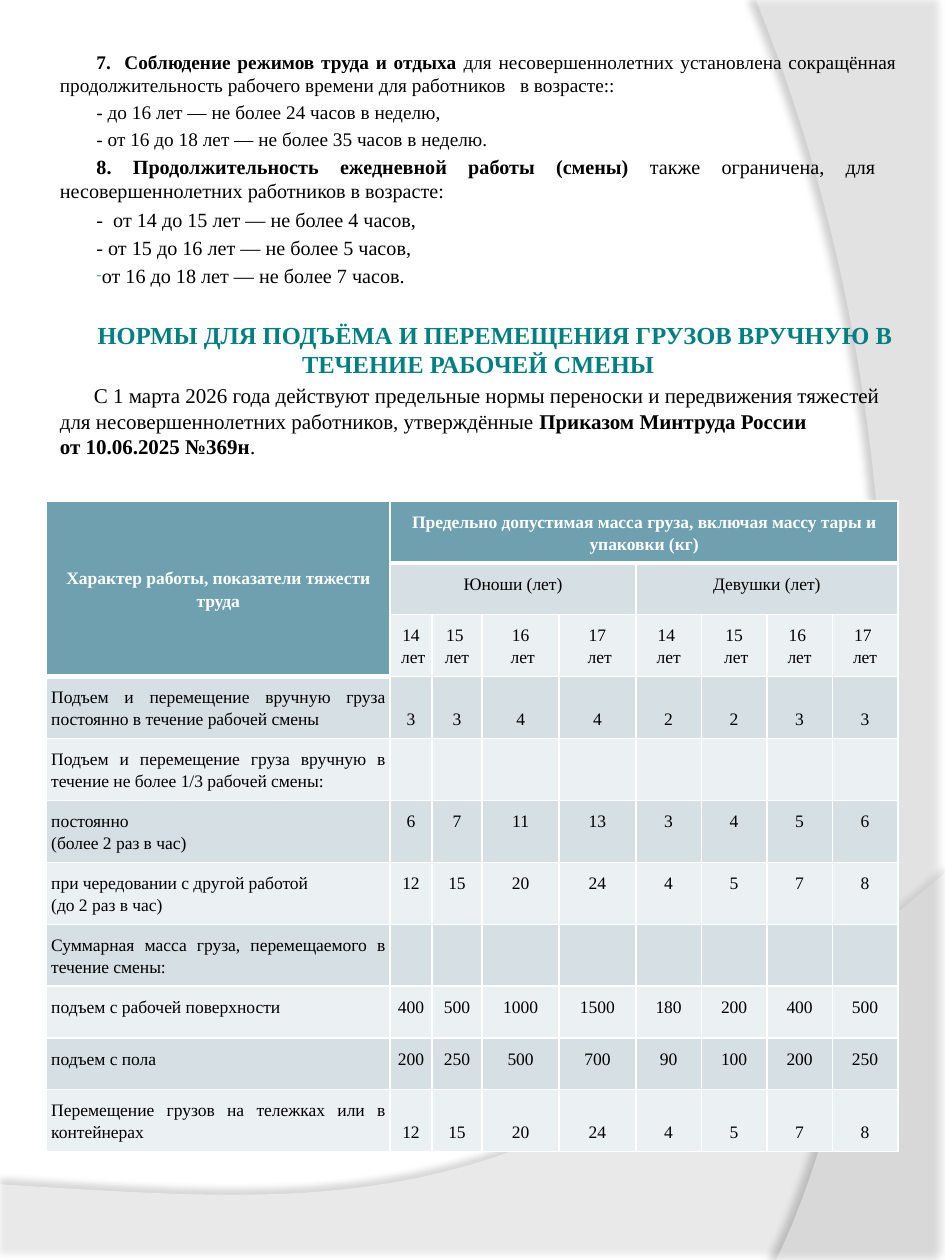
import pptx
import pptx.dml.color
import pptx.enum.text
import pptx.oxml
import pptx.oxml.ns
import pptx.util
from lxml import etree

ALIGN = pptx.enum.text.PP_ALIGN
ANCHOR = pptx.enum.text.MSO_ANCHOR
COLS, ROWS = 75, 100  # slide grid, one unit is a tenth of an inch
FINE = 1000  # steps per grid unit in curves
BLACK, WHITE, TEAL, STEEL = "000000", "FFFFFF", "008080", "6EA0B0"
BANDS = ("EBF0F2", "D5DFE4")


def rgb(value):
    return pptx.dml.color.RGBColor.from_string(value)


def units(n):
    return pptx.util.Inches(n / 10)


def sub(parent, tag, **attrs):
    return etree.SubElement(parent, pptx.oxml.ns.qn("a:" + tag),
                            {k: str(v) for k, v in attrs.items()})


def bezier(p0, p1, p2, p3, steps=60):
    for i in range(1, steps + 1):
        t = i / steps
        u = 1 - t
        yield tuple(u**3 * a + 3 * u * u * t * b + 3 * u * t * t * c + t**3 * d
                    for a, b, c, d in zip(p0, p1, p2, p3))


class Page:
    font = "Times New Roman"

    def __init__(self, prs):
        self.s = prs.slides.add_slide(prs.slide_layouts[1])
        title = self.s.shapes.title
        title.element.getparent().remove(title.element)
        self.body = self.s.placeholders[1]

    def run(self, p, text, size, color=BLACK, bold=False):
        r = p.add_run()
        r.text = text.replace("~", chr(160))  # a tilde stands for a no-break space
        r.font.name, r.font.size, r.font.bold = self.font, pptx.util.Pt(size), bold
        r.font.color.rgb = rgb(color)

    def wave(self, points, opacity, shade, distance, direction):
        """Translucent background sheet with a soft shadow along its edge."""
        points = [(x * FINE, y * FINE) for x, y in points]
        fb = self.s.shapes.build_freeform(*points[0], scale=units(1) / FINE)
        fb.add_line_segments(points[1:], close=True)
        sp = fb.convert_to_shape()
        sp.line.fill.background()
        sp.fill.solid()
        sp.fill.fore_color.rgb = rgb(WHITE)
        clr = sp.element.spPr.find(".//" + pptx.oxml.ns.qn("a:srgbClr"))
        sub(clr, "alpha", val=opacity * 1000)
        sp.shadow.inherit = False
        effects = sp.element.spPr.find(pptx.oxml.ns.qn("a:effectLst"))
        shadow = sub(effects, "outerShdw", blurRad=pptx.util.Pt(4),
                     dist=pptx.util.Pt(distance), dir=direction * 60000,
                     algn="ctr", rotWithShape=0)
        sub(sub(shadow, "srgbClr", val=BLACK), "alpha", val=shade * 1000)
        # Sheets lie behind the text
        tree = self.s.shapes._spTree
        tree.remove(sp.element)
        tree.insert(tree.index(self.body.element), sp.element)

    def text(self, left, top, width, height, paragraphs):
        sp = self.body
        sp.left, sp.top, sp.width, sp.height = map(units, (left, top, width, height))
        tf = sp.text_frame
        tf.word_wrap = True
        tf.auto_size = pptx.enum.text.MSO_AUTO_SIZE.NONE
        tf.vertical_anchor = ANCHOR.TOP
        for i, (align, indent, before, size, bullet, runs) in enumerate(paragraphs):
            p = tf.add_paragraph() if i else tf.paragraphs[0]
            pPr = p._p.get_or_add_pPr()
            pPr.set("marL", "0")
            pPr.set("indent", str(units(indent)))
            if bullet:
                sub(sub(pPr, "buClr"), "srgbClr", val=STEEL)
                sub(pPr, "buSzPct", val=80000)
                sub(pPr, "buChar", char=bullet)
            else:
                sub(pPr, "buNone")
            p.alignment, p.line_spacing = align, 1.0
            p.space_before = pptx.util.Pt(before if i else 0)
            for text, color, bold in runs:
                self.run(p, text, size, color, bold)

    def table(self, left, top, widths, heights):
        frame = self.s.shapes.add_table(len(heights), len(widths), units(left), units(top),
                                        units(sum(widths)), units(sum(heights)))
        tbl = frame.table
        tbl.first_row = tbl.horz_banding = False
        for column, width in zip(tbl.columns, widths):
            column.width = units(width)
        for row, height in zip(tbl.rows, heights):
            row.height = units(height)
        return tbl

    def cell(self, cell, text, fill, color, bold, align, anchor, bottom):
        tcPr = cell._tc.get_or_add_tcPr()
        for side, width in (("lnL", 1), ("lnR", 1), ("lnT", 1), ("lnB", bottom)):
            line = sub(tcPr, side, w=pptx.util.Pt(width))
            sub(sub(line, "solidFill"), "srgbClr", val=WHITE)
        cell.fill.solid()
        cell.fill.fore_color.rgb = rgb(fill)
        cell.margin_left = cell.margin_right = units(0.4)
        cell.margin_top = cell.margin_bottom = units(0.7)
        cell.vertical_anchor = anchor
        for i, part in enumerate(text.split("\n") if text else []):
            tf = cell.text_frame
            p = tf.add_paragraph() if i else tf.paragraphs[0]
            p.alignment, p.line_spacing = align, 1.15
            self.run(p, part, 10, color, bold)


def item(size, *runs, bullet=None):
    return ALIGN.JUSTIFY, 2.9, 0.2 * size, size, bullet, [(t, BLACK, b) for t, b in runs]


PARAGRAPHS = [
    item(11, ("7.  Соблюдение режимов труда и отдыха", True),
         (" для несовершеннолетних установлена сокращённая продолжительность "
          "рабочего времени для работников   в возрасте:: ", False)),
    item(11, ("- до~16~лет~—~не более~24~часов в неделю, ", False)),
    item(11, ("- от~16~до~18~лет~—~не более~35~часов в неделю. ", False)),
    item(11.5, ("8. Продолжительность ежедневной работы (смены) ", True),
         ("также ограничена, для  несовершеннолетних работников в возрасте: ", False)),
    item(11.5, ("-  от~14~до~15~лет~—~не более~4~часов, ", False)),
    item(11.5, ("- от~15~до~16~лет~—~не более~5~часов, ", False)),
    item(11.5, ("от~16~до~18~лет~—~не более~7~часов. ", False), bullet="-"),
    (ALIGN.CENTER, 2.7, 18.5, 14, None,
     [("НОРМЫ ДЛЯ ПОДЪЁМА И ПЕРЕМЕЩЕНИЯ ГРУЗОВ ВРУЧНУЮ В ТЕЧЕНИЕ РАБОЧЕЙ СМЕНЫ", TEAL, True)]),
    (ALIGN.LEFT, 2.7, 2.4, 12, None,
     [("С~1~марта 2026~года действуют предельные нормы переноски и передвижения "
       "тяжестей для несовершеннолетних работников, утверждённые~", BLACK, False),
      ("Приказом Минтруда России от~10.06.2025~№369н", BLACK, True),
      (".", BLACK, False)]),
]

NORMS = [
    ["Характер работы, показатели тяжести труда",
     "Предельно допустимая масса груза, включая массу тары и упаковки (кг)"],
    ["", "Юноши (лет)", "", "", "", "Девушки (лет)"],
    ["", "14\n лет ", "15 \nлет", "16\n лет", "17\n лет",
     "14 \nлет", "15\n лет", "16 \nлет", "17 \nлет"],
    ["Подъем и перемещение вручную груза постоянно в течение рабочей смены",
     3, 3, 4, 4, 2, 2, 3, 3],
    ["Подъем и перемещение груза вручную в течение не более 1/3 рабочей смены:"],
    ["постоянно\n(более 2 раз в час)", 6, 7, 11, 13, 3, 4, 5, 6],
    ["при чередовании с другой работой\n(до 2 раз в час)", 12, 15, 20, 24, 4, 5, 7, 8],
    ["Суммарная масса груза, перемещаемого в течение смены:"],
    ["подъем с рабочей поверхности", 400, 500, 1000, 1500, 180, 200, 400, 500],
    ["подъем с пола", 200, 250, 500, 700, 90, 100, 200, 250],
    ["Перемещение грузов на тележках или в контейнерах", 12, 15, 20, 24, 4, 5, 7, 8],
]
ONE_LINE_ROWS = (1, 8, 9)
BOTTOM_ROWS = (3, 10)
MERGES = [(0, 0, 2, 0), (0, 1, 0, 8), (1, 1, 1, 4), (1, 5, 1, 8)]


def main():
    prs = pptx.Presentation()
    prs.slide_width, prs.slide_height = units(COLS), units(ROWS)
    page = Page(prs)

    # Background waves: bottom, then right
    page.wave([(0, 94), (0, ROWS), (COLS, ROWS), (COLS, 69.3),
               *bezier((COLS, 69.3), (41.9, 97.2), (29.3, 95.8), (0, 94))], 45, 35, 3.5, 270)
    page.wave([(COLS, 0), (COLS, ROWS), (61.6, ROWS),
               *bezier((61.6, ROWS), (70.1, 82.6), (76.3, 40.1), (60, 0))], 40, 45, 4, 180)

    # Rules and heading
    page.text(3.75, 3.5, 68.4, 33.1, PARAGRAPHS)

    # Load limits
    widths = [27.3, 3.3, 4, 6.1, 6.1, 5.2, 5.2, 5.2, 5.2]
    heights = [4.1 if r in ONE_LINE_ROWS else 4.9 for r in range(len(NORMS))]
    tbl = page.table(3.67, 39.75, widths, heights)
    for r, values in enumerate(NORMS):
        for c in range(len(widths)):
            head = r == 0 or (c == 0 and r < 3)
            anchor = (ANCHOR.MIDDLE if head and c == 0 else
                      ANCHOR.BOTTOM if r in BOTTOM_ROWS and c else ANCHOR.TOP)
            page.cell(tbl.cell(r, c), str(values[c]) if c < len(values) else "",
                      STEEL if head else BANDS[r % 2], WHITE if head else BLACK, head,
                      ALIGN.JUSTIFY if c == 0 and not head else ALIGN.CENTER,
                      anchor, 3 if head else 1)
    for top, left, bottom, right in MERGES:
        tbl.cell(top, left).merge(tbl.cell(bottom, right))

    prs.save("out.pptx")


if __name__ == "__main__":
    main()
